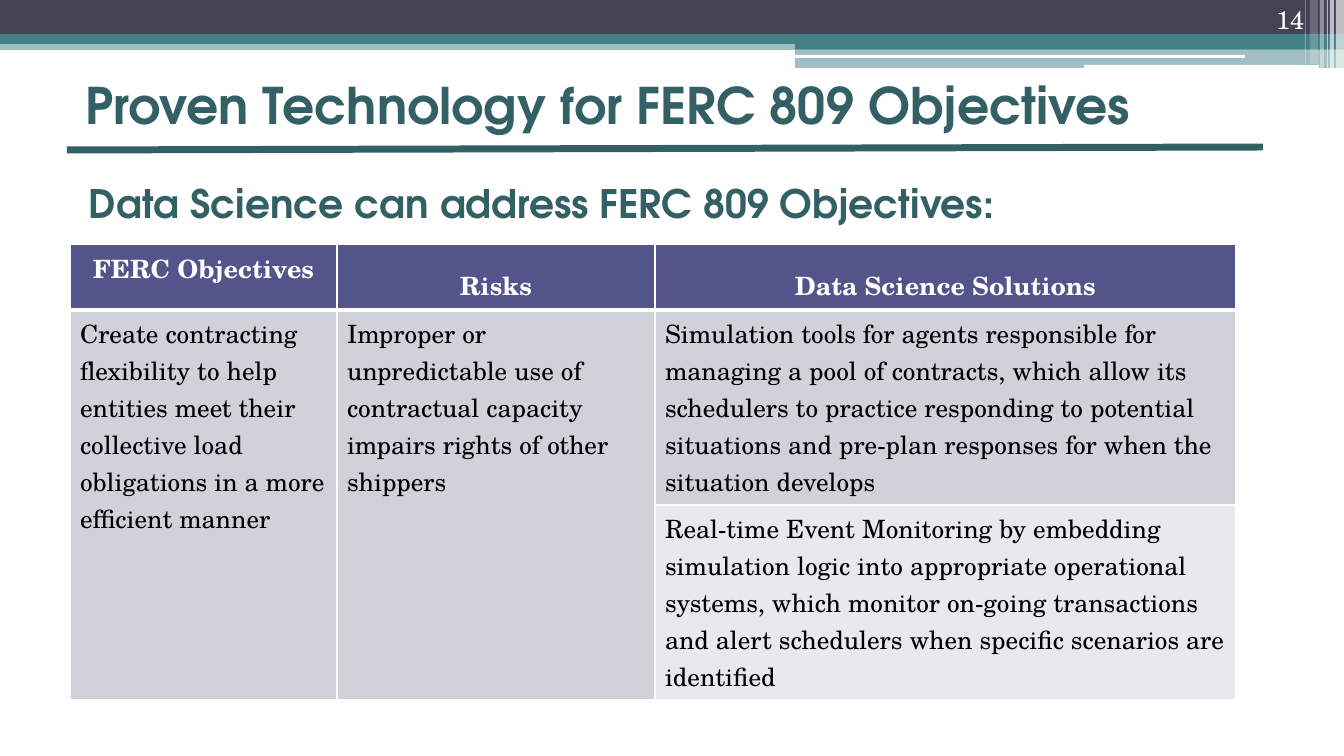
from lxml import etree
from pptx import Presentation
from pptx.dml.color import RGBColor
from pptx.enum.shapes import MSO_CONNECTOR, MSO_SHAPE
from pptx.enum.text import MSO_ANCHOR, PP_ALIGN
from pptx.oxml.ns import qn
from pptx.util import Pt

RECT, ROUND = MSO_SHAPE.RECTANGLE, MSO_SHAPE.ROUNDED_RECTANGLE
STRAIGHT = MSO_CONNECTOR.STRAIGHT
TOP, MIDDLE, BOTTOM = MSO_ANCHOR.TOP, MSO_ANCHOR.MIDDLE, MSO_ANCHOR.BOTTOM
LEFT, CENTER, RIGHT = PP_ALIGN.LEFT, PP_ALIGN.CENTER, PP_ALIGN.RIGHT

PX = 914400 / 100.8
HEADING_FONT = "TeX Gyre Adventor"
BODY_FONT = "TeX Gyre Schola"
COLORS = {
    "slate": "424456",
    "teal": "438086",
    "deep_teal": "326065",
    "white": "FFFFFF",
    "black": "000000",
    "header": "53548A",
    "band": "D1D1DA",
    "light_band": "E9E9ED",
}

BANDS = [
    (RECT, (0, 40, 1344, 10), "teal", 50),
    (RECT, (0, 0, 1344, 34), "slate", 100),
    (RECT, (0, 34, 1344, 10), "teal", 100),
    (RECT, (795, 39, 549, 10), "teal", 100),
    (RECT, (795, 49, 549, 19), "teal", 50),
    (ROUND, (795, 55, 450, 3), "white", 100),
    (ROUND, (1084, 65, 235, 4), "white", 100),
]
STRIPES = [
    (1336, 8, 68, 65),
    (1330, 4, 68, 65),
    (1327, 1, 68, 60),
    (1320, 4, 68, 40),
    (1310, 8, 64, 20),
    (1305, 1, 64, 30),
]

COLUMN_WIDTHS = [267, 318, 581]
ROW_HEIGHTS = [66, 195, 195]
HEADERS = [("FERC Objectives", 5), ("Risks", 22), ("Data Science Solutions", 22)]
OBJECTIVE = (
    "Create contracting flexibility to help entities meet their collective load "
    "obligations in a more efficient manner"
)
RISK = "Improper or unpredictable use of contractual capacity impairs rights of other shippers"
SIMULATION = (
    "Simulation tools for agents responsible for managing a pool of contracts, which "
    "allow its schedulers to practice responding to potential situations and pre-plan "
    "responses for when the situation develops"
)
MONITORING = (
    "Real-time Event Monitoring by embedding simulation logic into appropriate "
    "operational systems, which monitor on-going transactions and alert schedulers "
    "when specific scenarios are identified"
)


def px(*lengths):
    return [round(length * PX) for length in lengths]


def rgb(color):
    return RGBColor.from_string(COLORS[color])


def add_band(slide, preset, box, color, opacity):
    band = slide.shapes.add_shape(preset, *px(*box))
    band.shadow.inherit = False
    band.fill.solid()
    band.fill.fore_color.rgb = rgb(color)
    band.line.fill.background()
    if opacity < 100:
        tint = band.fill._xPr.find(qn("a:solidFill"))[0]
        etree.SubElement(tint, qn("a:alpha"), val=str(opacity * 1000))


def add_rule(slide, ends, color, width):
    rule = slide.shapes.add_connector(STRAIGHT, *px(*ends))
    rule.line.color.rgb = rgb(color)
    rule.line.width = Pt(width)
    etree.SubElement(rule._element.spPr, qn("a:effectLst"))


def write_text(frame, text, font, size, color, bold=False, align=LEFT):
    paragraph = frame.paragraphs[0]
    paragraph.add_run().text = text
    paragraph.alignment = align
    paragraph.font.name = font
    paragraph.font.size = Pt(size)
    paragraph.font.bold = bold
    paragraph.font.color.rgb = rgb(color)


def add_label(slide, box, text, font, size, color, bold=False, align=LEFT,
              anchor=TOP, inset=10):
    frame = slide.shapes.add_textbox(*px(*box)).text_frame
    frame.word_wrap = True
    frame.vertical_anchor = anchor
    frame.margin_left = px(inset)[0]
    write_text(frame, text, font, size, color, bold, align)


def set_borders(cell, bottom_width):
    properties = cell._tc.get_or_add_tcPr()
    widths = {"a:lnL": 1, "a:lnR": 1, "a:lnT": 1, "a:lnB": bottom_width}
    for position, (side, width) in enumerate(widths.items()):
        border = etree.Element(qn(side), w=str(Pt(width)))
        fill = etree.SubElement(border, qn("a:solidFill"))
        etree.SubElement(fill, qn("a:srgbClr"), val=COLORS["white"])
        properties.insert(position, border)


def fill_cell(cell, text, text_color, fill, top=5, bold=False, align=LEFT):
    cell.margin_top = px(top)[0]
    cell.fill.solid()
    cell.fill.fore_color.rgb = rgb(fill)
    write_text(cell.text_frame, text, BODY_FONT, 18, text_color, bold, align)


def add_objectives_table(slide):
    box = px(70, 244, sum(COLUMN_WIDTHS), sum(ROW_HEIGHTS))
    table = slide.shapes.add_table(len(ROW_HEIGHTS), len(COLUMN_WIDTHS), *box).table
    table.horz_banding = False
    for column, width in zip(table.columns, px(*COLUMN_WIDTHS)):
        column.width = width
    for row, height in zip(table.rows, px(*ROW_HEIGHTS)):
        row.height = height
    for column, (header, top) in enumerate(HEADERS):
        fill_cell(table.cell(0, column), header, "white", "header", top, True, CENTER)
    for column, text in enumerate([OBJECTIVE, RISK, SIMULATION]):
        fill_cell(table.cell(1, column), text, "black", "band")
    fill_cell(table.cell(2, 2), MONITORING, "black", "light_band")
    for column in range(2):
        table.cell(1, column).merge(table.cell(2, column))
    for row in range(len(ROW_HEIGHTS)):
        for column in range(len(COLUMN_WIDTHS)):
            set_borders(table.cell(row, column), 3 if row == 0 else 1)


def main():
    presentation = Presentation()
    presentation.slide_width, presentation.slide_height = px(1344, 756)
    slide = presentation.slides.add_slide(presentation.slide_layouts[6])
    for preset, box, color, opacity in BANDS:
        add_band(slide, preset, box, color, opacity)
    for left, width, height, opacity in STRIPES:
        add_band(slide, RECT, (left, 0, width, height), "white", opacity)
    add_rule(slide, (67, 150, 1263, 147), "deep_teal", 5)
    add_label(slide, (75, 68, 1174, 72), "Proven Technology for FERC 809 Objectives",
              HEADING_FONT, 36, "deep_teal", bold=True, anchor=MIDDLE)
    add_objectives_table(slide)
    add_label(slide, (1202, 0, 112, 40), "14", BODY_FONT, 18, "white",
              align=RIGHT, anchor=BOTTOM)
    add_label(slide, (67, 174, 1156, 57), "Data Science can address FERC 809 Objectives:",
              HEADING_FONT, 28, "deep_teal", bold=True, inset=22)
    presentation.save("out.pptx")


if __name__ == "__main__":
    main()
